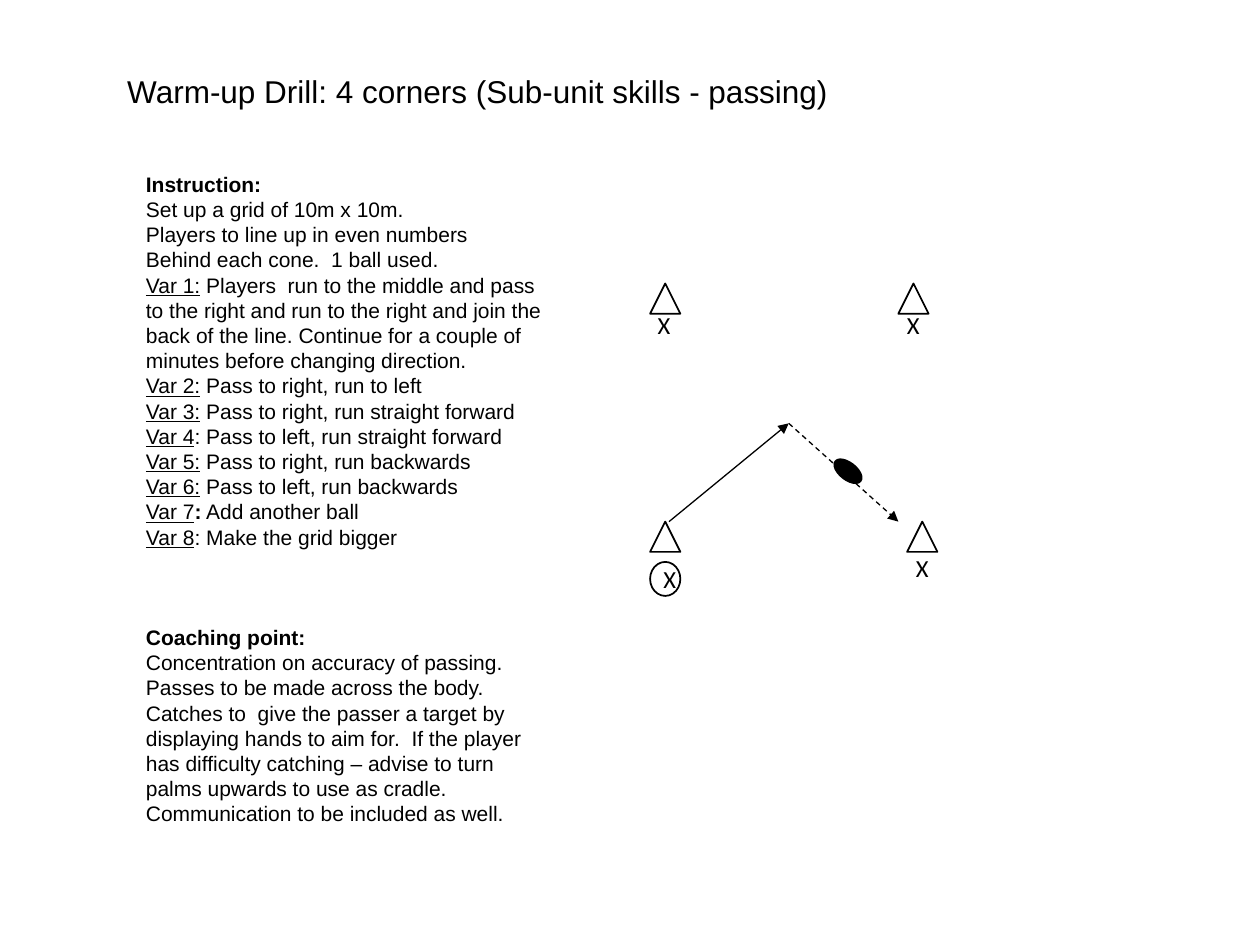
from dataclasses import dataclass

import pptx
import pptx.dml.color
import pptx.enum.dml
import pptx.enum.shapes
import pptx.enum.text
import pptx.oxml
import pptx.oxml.ns
import pptx.util

EMU_PER_PX = 9144  # 100 px to the inch
SHAPES = pptx.enum.shapes.MSO_SHAPE
ALIGN = pptx.enum.text.PP_ALIGN
ANCHOR = pptx.enum.text.MSO_ANCHOR


@dataclass(frozen=True)
class Theme:
    ink: pptx.dml.color.RGBColor = pptx.dml.color.RGBColor(0, 0, 0)
    text_font: str = "Arial"
    player_font: str = "Calibri"
    title_size: int = 18
    body_size: int = 12
    player_size: int = 14
    outline: float = 1
    ball_outline: float = 2
    path_width: float = 0.75
    section_gap: int = 43


THEME = Theme()

# Each paragraph is a list of (text, style) runs: b bold, u underlined
INSTRUCTIONS = [
    [("Instruction:", "b")],
    [("Set up a grid of 10m x 10m.", "")],
    [("Players to line up in even numbers", "")],
    [("Behind each cone.  1 ball used.", "")],
    [("Var 1:", "u"), (" Players  run to the middle and pass to the right and run to "
                       "the right and join the back of the line. Continue for a couple "
                       "of minutes before changing direction.", "")],
    [("Var 2:", "u"), (" Pass to right, run to left", "")],
    [("Var 3:", "u"), (" Pass to right, run straight forward", "")],
    [("Var 4", "u"), (": Pass to left, run straight forward", "")],
    [("Var 5:", "u"), (" Pass to right, run backwards", "")],
    [("Var 6:", "u"), (" Pass to left, run backwards", "")],
    [("Var 7", "u"), (":", "b"), (" Add another ball", "")],
    [("Var 8", "u"), (": Make the grid bigger", "")],
]
COACHING = [
    [("Coaching point:", "b")],
    [("Concentration on accuracy of passing. Passes to be made across the body.", "")],
    [("Catches to  give the passer a target by displaying hands to aim for.  If the "
      "player has difficulty catching – advise to turn palms upwards to use as cradle.", "")],
    [("Communication to be included as well.", "")],
]

CONE_SIZE = 24
CONES = [(713, 225), (516, 225), (720, 414), (516, 414)]
PLAYERS = [(512, 241, 35), (717, 434, 30), (710, 241, 30)]
MIDDLE = (626, 336)


def px(*lengths):
    return [pptx.util.Emu(length * EMU_PER_PX) for length in lengths]


def style_font(font, name, size):
    font.name = name
    font.size = pptx.util.Pt(size)
    font.color.rgb = THEME.ink


def add_title(slide, text, box):
    title = slide.shapes.title
    title.left, title.top, title.width, title.height = px(*box)
    frame = title.text_frame
    frame.text = text
    frame.word_wrap = False
    frame.auto_size = pptx.enum.text.MSO_AUTO_SIZE.NONE
    frame.vertical_anchor = ANCHOR.TOP
    frame.paragraphs[0].alignment = ALIGN.LEFT
    style_font(frame.paragraphs[0].runs[0].font, THEME.text_font, THEME.title_size)


def add_notes_column(slide, sections, box):
    frame = slide.shapes.add_textbox(*px(*box)).text_frame
    frame.word_wrap = True
    first = True
    for section in sections:
        for line_number, runs in enumerate(section):
            paragraph = frame.paragraphs[0] if first else frame.add_paragraph()
            if line_number == 0 and not first:
                paragraph.space_before = pptx.util.Pt(THEME.section_gap)
            first = False
            for text, style in runs:
                run = paragraph.add_run()
                run.text = text
                style_font(run.font, THEME.text_font, THEME.body_size)
                run.font.bold = "b" in style
                run.font.underline = "u" in style


def add_marker(slide, kind, box, outline, filled=False):
    marker = slide.shapes.add_shape(kind, *px(*box))
    marker.shadow.inherit = False
    if filled:
        marker.fill.solid()
        marker.fill.fore_color.rgb = THEME.ink
    else:
        marker.fill.background()
    marker.line.color.rgb = THEME.ink
    marker.line.width = pptx.util.Pt(outline)
    return marker


def write_player(frame):
    frame.text = "X"
    style_font(frame.paragraphs[0].runs[0].font, THEME.player_font, THEME.player_size)


def add_player(slide, left, top, width):
    frame = slide.shapes.add_textbox(*px(left, top, width, 34)).text_frame
    frame.word_wrap = False
    write_player(frame)


def add_starting_player(slide, box):
    frame = add_marker(slide, SHAPES.OVAL, box, THEME.outline).text_frame
    write_player(frame)
    frame.vertical_anchor = ANCHOR.MIDDLE
    frame.paragraphs[0].alignment = ALIGN.CENTER


def add_path(slide, start, end, dashed=False):
    path_line = slide.shapes.add_connector(
        pptx.enum.shapes.MSO_CONNECTOR.STRAIGHT, *px(*start, *end))
    path_line.line.color.rgb = THEME.ink
    path_line.line.width = pptx.util.Pt(THEME.path_width)
    if dashed:
        path_line.line.dash_style = pptx.enum.dml.MSO_LINE.DASH
    arrowhead = pptx.oxml.parse_xml(
        f'<a:tailEnd {pptx.oxml.ns.nsdecls("a")} type="triangle"/>')
    path_line.line._get_or_add_ln().append(arrowhead)
    no_shadow = pptx.oxml.parse_xml(f'<a:effectLst {pptx.oxml.ns.nsdecls("a")}/>')
    path_line._element.spPr.append(no_shadow)


def main():
    deck = pptx.Presentation()
    deck.slide_width, deck.slide_height = px(1000, 750)
    slide = deck.slides.add_slide(deck.slide_layouts[5])

    add_title(slide, "Warm-up Drill: 4 corners (Sub-unit skills - passing)",
              (91, 52, 582, 40))

    # Cones and players at the corners of the grid
    for left, top in CONES:
        add_marker(slide, SHAPES.ISOSCELES_TRIANGLE,
                   (left, top, CONE_SIZE, CONE_SIZE), THEME.outline)
    add_starting_player(slide, (516, 446, 24, 27))
    for player in PLAYERS:
        add_player(slide, *player)

    # Run to the middle, then the pass with its ball
    add_path(slide, (531, 414), MIDDLE)
    add_path(slide, MIDDLE, (713, 414), dashed=True)
    ball = add_marker(slide, SHAPES.OVAL, (661, 368, 24, 12),
                      THEME.ball_outline, filled=True)
    ball.rotation = 38

    # Instructions and coaching point
    add_notes_column(slide, (INSTRUCTIONS, COACHING), (106, 131, 339, 555))

    deck.save("out.pptx")


if __name__ == "__main__":
    main()
